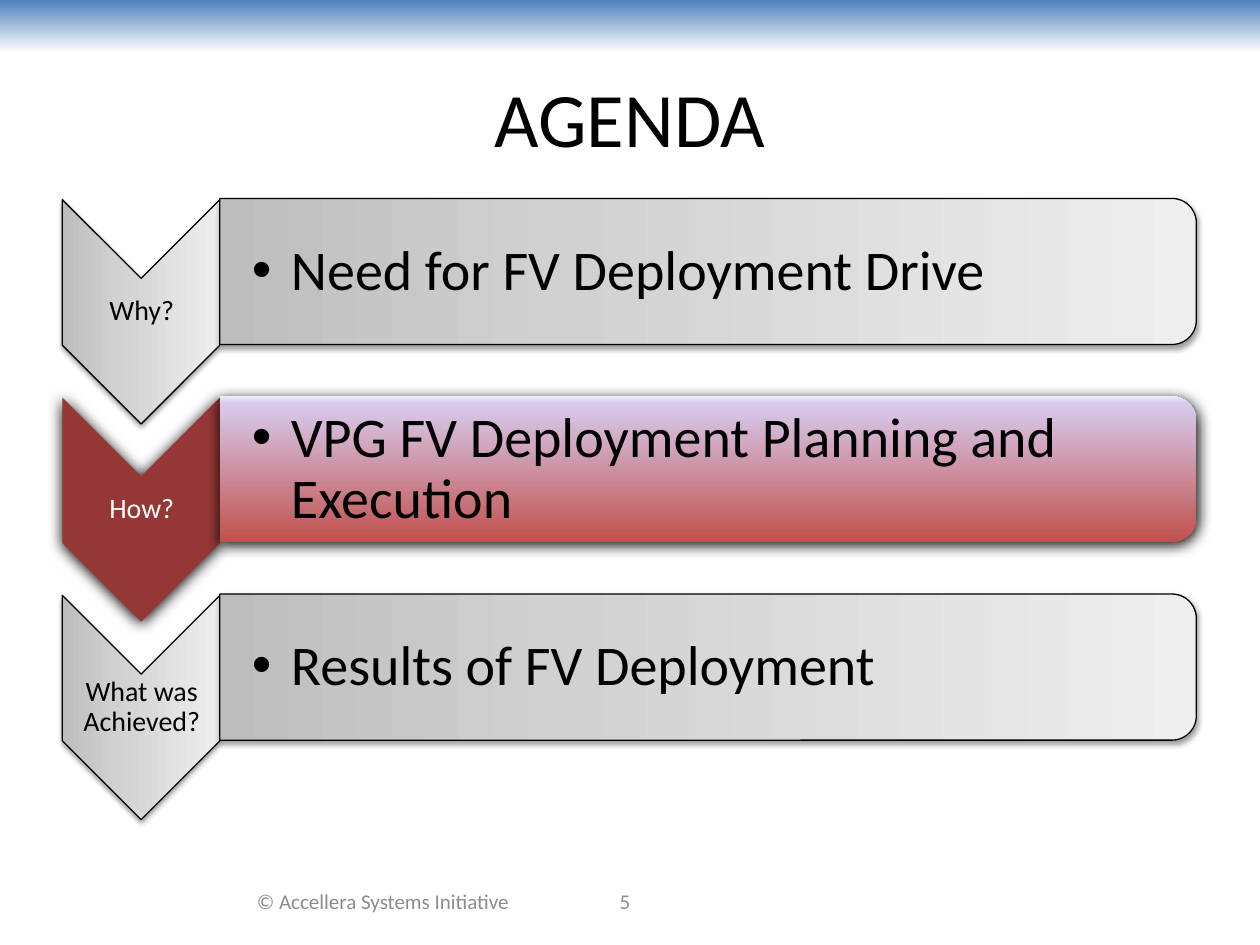
import pptx
import pptx.util
import pptx.dml.color
import pptx.enum.shapes
import pptx.enum.text
import pptx.oxml.ns
from lxml import etree

Inches, Pt = pptx.util.Inches, pptx.util.Pt
Kind = pptx.enum.shapes.MSO_SHAPE
Align = pptx.enum.text.PP_ALIGN
qn = pptx.oxml.ns.qn

BLUE = [(0, "4F81BD"), (100, "FFFFFF")]
GREY = [(0, "BDBDBD"), (35, "D1D1D1"), (100, "EEEEEE")]
RED = [(0, "C0504D"), (95, "D8CBEE"), (100, "F0EAF9")]
SOFT = (38, 3.1, 1.6)  # opacity in percent, blur and distance in points
DARK = (100, 8.5, 1)


def color(code):
    return pptx.dml.color.RGBColor.from_string(code)


def child(node, tag, **attrs):
    return etree.SubElement(node, qn(tag), {k: str(v) for k, v in attrs.items()})


def assign(item, values):
    for name, value in values.items():
        setattr(item, name, value)


class Deck:
    font = "Calibri"

    def __init__(self, slide):
        self.slide = slide

    def grade(self, shape, stops, angle, spin):
        props = shape._element.spPr
        grad = child(props, "a:gradFill", rotWithShape=int(spin))
        stack = child(grad, "a:gsLst")
        for pos, code in stops:
            stop = child(stack, "a:gs", pos=pos * 1000)
            child(stop, "a:srgbClr", val=code)
        child(grad, "a:lin", ang=angle * 60000, scaled=0)
        props.find(qn("a:prstGeom")).addnext(grad)

    def shade(self, shape, shadow):
        alpha, blur, dist = shadow
        effect = shape._element.spPr.find(qn("a:effectLst"))
        outer = child(effect, "a:outerShdw", blurRad=Pt(blur), dist=Pt(dist),
                      dir=90 * 60000, rotWithShape=0)
        tint = child(outer, "a:srgbClr", val="000000")
        child(tint, "a:alpha", val=alpha * 1000)

    def shape(self, kind, box, fill, angle=270, turn=0, spin=True,
              line=None, shadow=None):
        item = self.slide.shapes.add_shape(kind, *map(Inches, box))
        item.rotation = turn
        if isinstance(fill, str):
            item.fill.solid()
            item.fill.fore_color.rgb = color(fill)
        else:
            self.grade(item, fill, angle, spin)
        if line:
            item.line.color.rgb = color(line)
            item.line.width = Pt(0.75)
        else:
            item.line.fill.background()
        item.shadow.inherit = False
        if shadow:
            self.shade(item, shadow)

    def text(self, words, box, size, code="000000", inset=None,
             align=Align.CENTER, space=None, bullet=False):
        frame = self.slide.shapes.add_textbox(*map(Inches, box)).text_frame
        assign(frame, {"word_wrap": True,
                       "vertical_anchor": pptx.enum.text.MSO_ANCHOR.MIDDLE})
        if inset:
            sides = ("left", "top", "right", "bottom")
            assign(frame, {f"margin_{side}": Inches(gap)
                           for side, gap in zip(sides, inset)})
        para = frame.paragraphs[0]
        assign(para, {"alignment": align, "line_spacing": space})
        if bullet:
            props = para._p.get_or_add_pPr()
            props.set("marL", str(Inches(0.31)))
            props.set("indent", str(Inches(-0.31)))
            child(props, "a:buFont", typeface="Arial")
            child(props, "a:buChar", char="•")
        run = para.add_run()
        run.text = words
        assign(run.font, {"name": self.font, "size": Pt(size)})
        run.font.color.rgb = color(code)

    def row(self, top, label, point, active):
        if active:
            look = {"shadow": DARK}
            arrow, bar, ink = "953735", RED, "FFFFFF"
        else:
            look = {"shadow": SOFT, "line": "000000"}
            arrow, bar, ink = GREY, GREY, "000000"
        # Both shapes are turned a quarter, so their boxes lie sideways
        self.shape(Kind.CHEVRON, (0.23, top + 0.27, 1.78, 1.25), arrow,
                   turn=90, **look)
        self.text(label, (0.5, top + 0.63, 1.25, 0.53), 16, ink,
                  inset=[0.01] * 4, space=0.9)
        self.shape(Kind.ROUND_2_SAME_RECTANGLE, (5.04, top - 3.3, 1.16, 7.75),
                   bar, turn=90, spin=not active, **look)
        self.text(point, (1.75, top + 0.06, 7.7, 1.04), 32,
                  inset=(0.25, 0.02, 0.02, 0.02), align=Align.LEFT,
                  space=0.9, bullet=True)


def main():
    show = pptx.Presentation()
    show.slide_width, show.slide_height = Inches(10), Inches(7.5)
    deck = Deck(show.slides.add_slide(show.slide_layouts[6]))

    # Top band and title
    deck.shape(Kind.RECTANGLE, (0, 0, 10, 0.42), BLUE, angle=90)
    deck.text("AGENDA", (0.5, 0.3, 9, 1.25), 44)

    # Footer
    deck.text("© Accellera Systems Initiative", (1.83, 6.95, 2.42, 0.4),
              12, "8C8C8C")
    deck.text("5", (4, 6.95, 1.92, 0.4), 12, "8C8C8C")

    # Agenda rows, the second one active
    rows = [
        ("Why?", "Need for FV Deployment Drive"),
        ("How?", "VPG FV Deployment Planning and Execution"),
        ("What was Achieved?", "Results of FV Deployment"),
    ]
    for i, (label, point) in enumerate(rows):
        deck.row(1.58 + 1.57 * i, label, point, active=i == 1)

    show.save("out.pptx")


if __name__ == "__main__":
    main()
